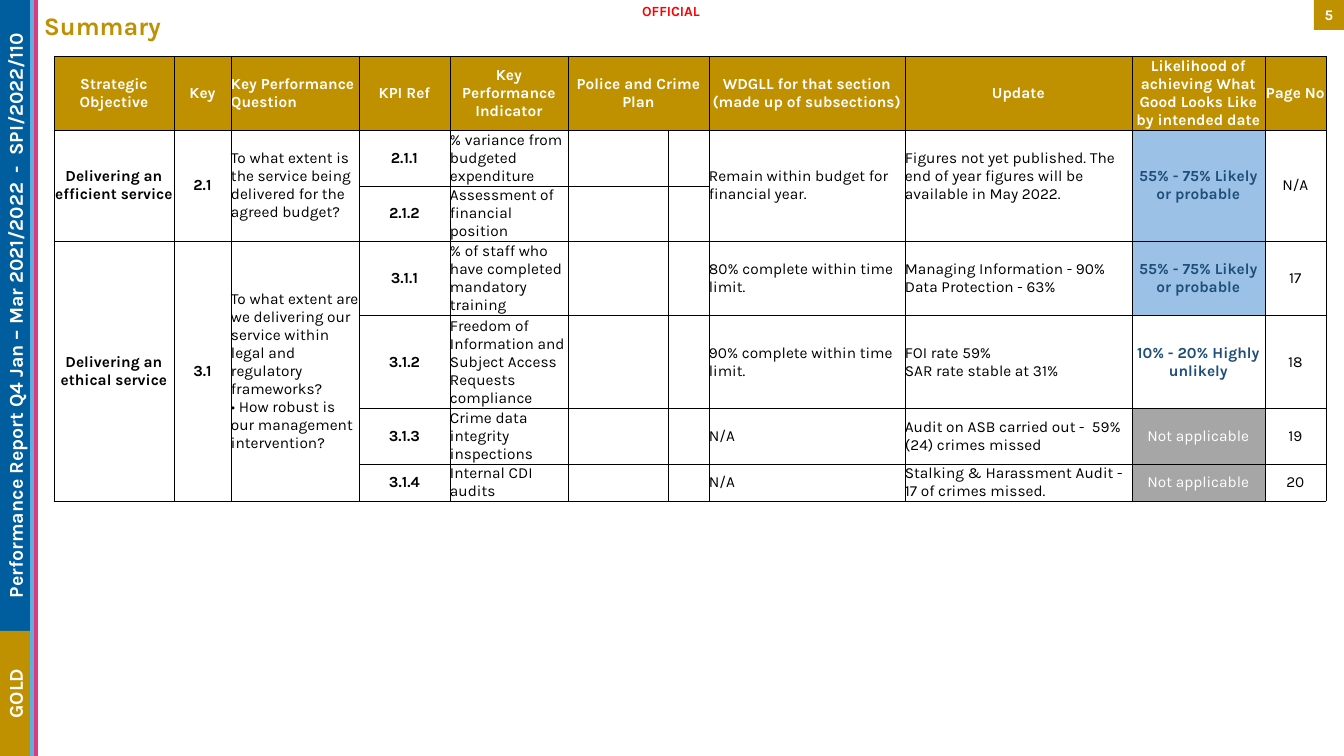
"""Build the quarterly performance summary slide with its objectives table."""
from pptx import Presentation
from pptx.dml.color import RGBColor
from pptx.enum.shapes import MSO_SHAPE
from pptx.enum.text import MSO_ANCHOR, PP_ALIGN
from pptx.oxml import parse_xml
from pptx.oxml.ns import nsdecls
from pptx.util import Emu, Pt

PX = 914400 / 100.8
WHITE = RGBColor(0xFF, 0xFF, 0xFF)
BLACK = RGBColor(0x00, 0x00, 0x00)
RED = RGBColor(0xFF, 0x00, 0x00)
GOLD = RGBColor(0xBF, 0x90, 0x00)
BLUE = RGBColor(0x00, 0x5E, 0x9E)
SKY = RGBColor(0x5E, 0xAE, 0xE0)
PINK = RGBColor(0xDC, 0x39, 0x7F)
NAVY = RGBColor(0x1F, 0x4E, 0x78)
PALE_BLUE = RGBColor(0x9B, 0xC2, 0xE6)
GREY = RGBColor(0xA6, 0xA6, 0xA6)


def px(*lengths):
    return [Emu(round(length * PX)) for length in lengths]


def write(frame, text, size, color, bold=True, align=PP_ALIGN.CENTER):
    frame.word_wrap = True
    paragraph = frame.paragraphs[0]
    paragraph.alignment = align
    for index, line in enumerate(text.split("\n")):
        if index:
            paragraph.add_line_break()
        run = paragraph.add_run()
        run.text = line
        run.font.name = "Karla"
        run.font.size = Pt(size)
        run.font.bold = bold
        run.font.color.rgb = color


presentation = Presentation()
presentation.slide_width, presentation.slide_height = px(1344, 756)
slide = presentation.slides.add_slide(presentation.slide_layouts[6])

labels = [
    ((593, -2, 156, 27), "OFFICIAL", 10, RED, PP_ALIGN.CENTER),
    ((34, 5, 1134, 40), "Summary", 18, GOLD, PP_ALIGN.LEFT),
]
for box, text, size, color, align in labels:
    label = slide.shapes.add_textbox(*px(*box))
    write(label.text_frame, text, size, color, align=align)

bars = [
    ((0, 0, 30, 631), BLUE, "Performance Report Q4 Jan – Mar 2021/2022  -  SPI/2022/110", 14, "vert270"),
    ((0, 631, 30, 125), GOLD, "GOLD", 14, "vert270"),
    ((30, 0, 4, 756), SKY, "", 14, "horz"),
    ((34, 0, 4, 756), PINK, "", 14, "horz"),
    ((1314, 0, 30, 30), GOLD, "5", 10.5, "horz"),
]
for box, color, text, size, direction in bars:
    bar = slide.shapes.add_shape(MSO_SHAPE.RECTANGLE, *px(*box))
    bar.shadow.inherit = False
    bar.fill.solid()
    bar.fill.fore_color.rgb = color
    bar.line.fill.background()
    if text:
        frame = bar.text_frame
        frame.margin_left = frame.margin_right = 0
        frame.margin_top = frame.margin_bottom = 0
        frame.vertical_anchor = MSO_ANCHOR.MIDDLE
        frame._txBody.bodyPr.set("vert", direction)
        write(frame, text, size, WHITE)

LIKELY = "55% - 75% Likely or probable"
UNLIKELY = "10% - 20% Highly unlikely"
NOT_APPLICABLE = "Not applicable"
likelihood_styles = {
    LIKELY: (PALE_BLUE, NAVY, True),
    UNLIKELY: (WHITE, NAVY, True),
    NOT_APPLICABLE: (GREY, WHITE, False),
}
rows = [
    ["Strategic Objective", "Key", "Key Performance Question", "KPI Ref",
     "Key Performance Indicator", "Police and Crime Plan", "",
     "WDGLL for that section (made up of subsections)", "Update",
     "Likelihood of achieving What Good Looks Like by intended date", "Page No"],
    ["Delivering an efficient service", "2.1",
     "To what extent is the service being delivered for the agreed budget?",
     "2.1.1", "% variance from budgeted expenditure", "", "",
     "Remain within budget for financial year.",
     "Figures not yet published. The end of year figures will be available in May 2022.",
     LIKELY, "N/A"],
    ["", "", "", "2.1.2", "Assessment of financial position", "", "", "", "", "", ""],
    ["Delivering an ethical service", "3.1",
     "To what extent are we delivering our service within legal and regulatory frameworks?\n"
     "• How robust is our management intervention?",
     "3.1.1", "% of staff who have completed mandatory training", "", "",
     "80% complete within time limit.",
     "Managing Information - 90%\nData Protection - 63%", LIKELY, "17"],
    ["", "", "", "3.1.2", "Freedom of Information and Subject Access Requests compliance",
     "", "", "90% complete within time limit.",
     "FOI rate 59%\nSAR rate stable at 31%", UNLIKELY, "18"],
    ["", "", "", "3.1.3", "Crime data integrity inspections", "", "", "N/A",
     "Audit on ASB carried out -  59% (24) crimes missed", NOT_APPLICABLE, "19"],
    ["", "", "", "3.1.4", "Internal CDI audits", "", "", "N/A",
     "Stalking & Harassment Audit - 17 of crimes missed.", NOT_APPLICABLE, "20"],
]
column_widths = [120, 57, 128, 91, 118, 100, 41, 196, 227, 133, 61]
row_heights = [74, 56, 55, 74, 93, 55, 37]
QUESTION, UPDATE = 2, 8
LEFT_COLUMNS = {QUESTION, 4, 7, UPDATE}
BOLD_COLUMNS = {0, 1, 3}

table = slide.shapes.add_table(
    len(rows), len(column_widths),
    *px(54, 56, sum(column_widths), sum(row_heights))).table
table.first_row = table.horz_banding = False
for column, width in zip(table.columns, px(*column_widths)):
    column.width = width
for row, height in zip(table.rows, px(*row_heights)):
    row.height = height

table.cell(0, 5).merge(table.cell(0, 6))
for first, last, merged_columns in ((1, 2, (0, 1, 2, 7, 8, 9, 10)), (3, 6, (0, 1, 2))):
    for column in merged_columns:
        table.cell(first, column).merge(table.cell(last, column))

for row, texts in enumerate(rows):
    for column, text in enumerate(texts):
        cell = table.cell(row, column)
        cell.margin_left = cell.margin_right = cell.margin_top = cell.margin_bottom = 0
        cell.vertical_anchor = MSO_ANCHOR.MIDDLE
        properties = cell._tc.get_or_add_tcPr()
        for side in "LRTB":
            properties.append(parse_xml(
                f'<a:ln{side} {nsdecls("a")} w="6350"><a:solidFill>'
                f'<a:srgbClr val="{BLACK}"/></a:solidFill></a:ln{side}>'))
        fill, color, bold = likelihood_styles.get(text, (None, BLACK, column in BOLD_COLUMNS))
        left = column in LEFT_COLUMNS
        if row == 0:
            fill, color, bold, left = GOLD, WHITE, True, column == QUESTION
        if fill is None:
            cell.fill.background()
        else:
            cell.fill.solid()
            cell.fill.fore_color.rgb = fill
        if text:
            write(cell.text_frame, text, 11, color, bold,
                  PP_ALIGN.LEFT if left else PP_ALIGN.CENTER)

table.cell(1, UPDATE).margin_bottom = px(18)[0]

presentation.save("out.pptx")
